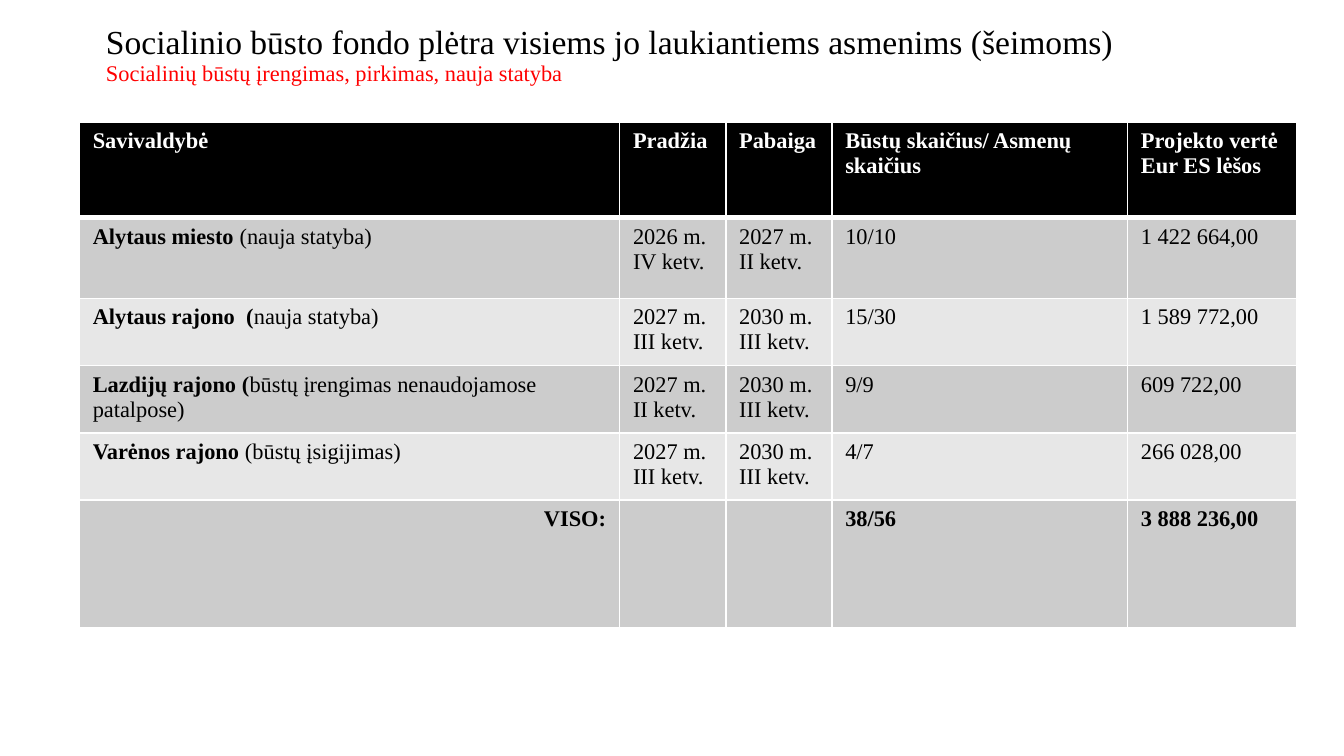
from lxml import etree
from pptx import Presentation
from pptx import util as u
from pptx.dml.color import RGBColor
from pptx.enum import text
from pptx.oxml.ns import qn

BLACK = RGBColor(0x00, 0x00, 0x00)
WHITE = RGBColor(0xFF, 0xFF, 0xFF)
RED = RGBColor(0xFF, 0x00, 0x00)
DARK_BAND = RGBColor(0xCC, 0xCC, 0xCC)
LIGHT_BAND = RGBColor(0xE7, 0xE7, 0xE7)
FONT = "Times New Roman"

WIDTH = 10
HEIGHT = WIDTH * 9 / 16
TITLE_BOX = (0.69, 0.14, 8.62, 0.7)
TABLE_BOX = (0.59, 0.91, 9.06, 3.76)
COLUMNS = (4.02, 0.79, 0.79, 2.2, 1.26)
ROWS = (0.71, 0.6, 0.48, 0.48, 0.48, 0.95)

HEADER = ("Savivaldybė", "Pradžia", "Pabaiga",
          "Būstų skaičius/ Asmenų skaičius", "Projekto vertė Eur ES lėšos")
# Each municipality is a bold part followed by a plain part.
PROJECTS = (
    (("Alytaus miesto ", "(nauja statyba)"),
     "2026 m. IV ketv.", "2027 m. II ketv.", "10/10", "1 422 664,00"),
    (("Alytaus rajono  (", "nauja statyba)"),
     "2027 m. III ketv.", "2030 m. III ketv.", "15/30", "1 589 772,00"),
    (("Lazdijų rajono (", "būstų įrengimas nenaudojamose patalpose)"),
     "2027 m. II ketv.", "2030 m. III ketv.", "9/9", "609 722,00"),
    (("Varėnos rajono ", "(būstų įsigijimas)"),
     "2027 m. III ketv.", "2030 m. III ketv.", "4/7", "266 028,00"),
)
TOTAL = ("VISO:", "", "", "38/56", "3 888 236,00")


def add_text(p, content, size=12, color=BLACK, bold=False):
    r = p.add_run()
    r.text = content
    r.font.name = FONT
    r.font.size = u.Pt(size)
    r.font.bold = bold
    r.font.color.rgb = color


def set_borders(cell, **widths):
    """Draw white cell borders; widths in points by side (L, R, T, B)."""
    props = cell._tc.get_or_add_tcPr()
    for i, (side, width) in enumerate(widths.items()):
        line = etree.Element(qn(f"a:ln{side}"), w=str(u.Pt(width)))
        fill = etree.SubElement(line, qn("a:solidFill"))
        etree.SubElement(fill, qn("a:srgbClr"), val=str(WHITE))
        props.insert(i, line)


def add_title(slide, box):
    tf = slide.shapes.add_textbox(*map(u.Inches, box)).text_frame
    tf.word_wrap = True
    p = tf.paragraphs[0]
    p.line_spacing = 0.9
    add_text(p, "Socialinio būsto fondo plėtra visiems jo laukiantiems "
                "asmenims (šeimoms)", size=18)
    p.add_line_break()
    add_text(p, "Socialinių būstų įrengimas, pirkimas, nauja statyba", color=RED)


def add_project_table(slide, box):
    rows = (HEADER, *PROJECTS, TOTAL)
    last = len(rows) - 1
    sp = slide.shapes.add_table(len(rows), len(COLUMNS), *map(u.Inches, box))
    table = sp.table
    for column, width in zip(table.columns, COLUMNS):
        column.width = u.Inches(width)
    for row, height in zip(table.rows, ROWS):
        row.height = u.Inches(height)

    for i, values in enumerate(rows):
        is_header = i == 0
        band = BLACK if is_header else DARK_BAND if i % 2 else LIGHT_BAND
        for j, value in enumerate(values):
            cell = table.cell(i, j)
            cell.fill.solid()
            cell.fill.fore_color.rgb = band
            set_borders(cell, L=1, R=1, T=3 if i == 1 else 1,
                        B=3 if is_header else 1)
            p = cell.text_frame.paragraphs[0]
            p.font.size = u.Pt(12)
            if isinstance(value, tuple):
                name, work = value
                add_text(p, name, bold=True)
                add_text(p, work)
            elif value:
                add_text(p, value, color=WHITE if is_header else BLACK,
                         bold=i in (0, last))
    table.cell(last, 0).text_frame.paragraphs[0].alignment = text.PP_ALIGN.RIGHT


def main():
    prs = Presentation()
    prs.slide_width, prs.slide_height = u.Inches(WIDTH), u.Inches(HEIGHT)
    slide = prs.slides.add_slide(prs.slide_layouts[6])
    add_title(slide, TITLE_BOX)
    add_project_table(slide, TABLE_BOX)
    prs.save("out.pptx")


if __name__ == "__main__":
    main()
